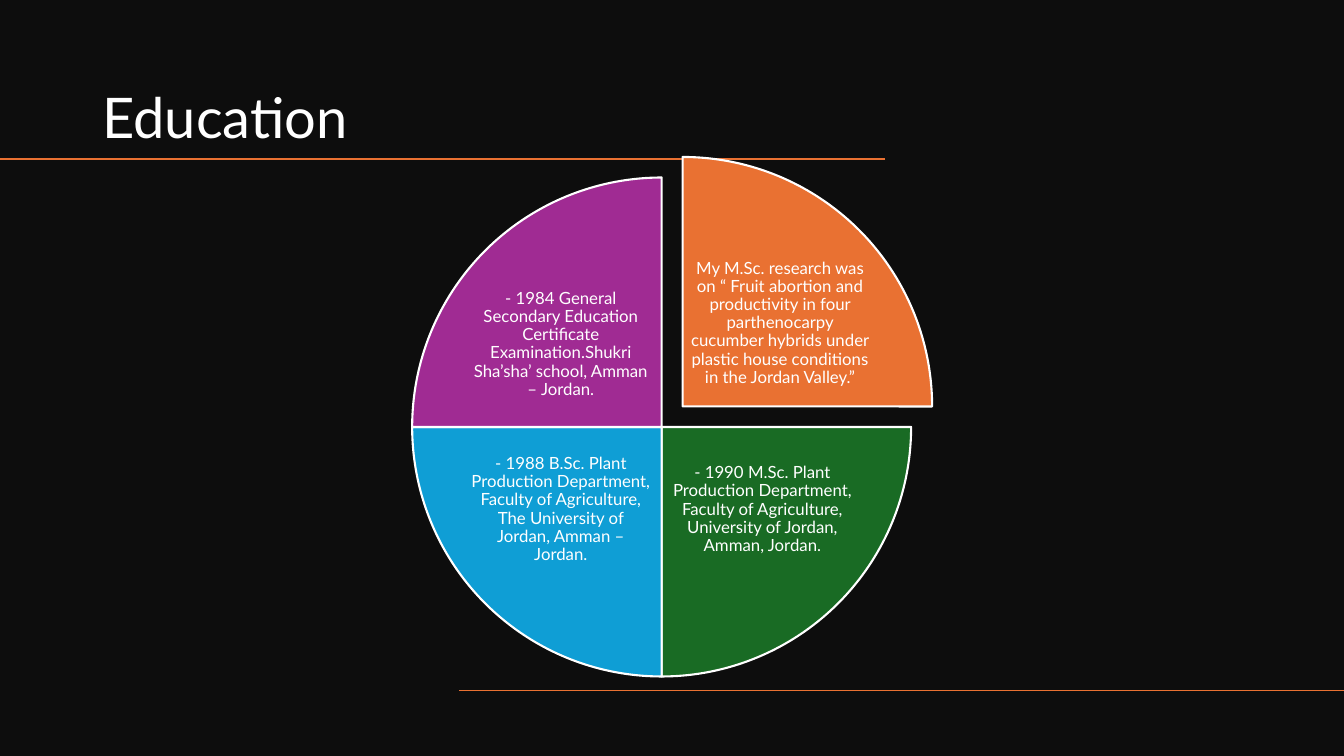
from lxml import etree
from pptx import Presentation
from pptx.dml.color import RGBColor
from pptx.enum import shapes, text
from pptx.oxml.ns import qn
from pptx.util import Pt

COLORS = {
    "background": "0D0D0D",
    "white": "FFFFFF",
    "orange": "E97132",
    "green": "196B24",
    "blue": "0F9ED5",
    "purple": "A02B93",
}
FONT = "Lato"
TITLE = "Education"
RULES = [(632.2, 0, 113.6), (960, 327.8, 493.2)]
QUARTERS = [
    ("orange", 270, (1, -1), (15, -14.7), (12.6, -15),
     "My M.Sc. research was on “ Fruit abortion and productivity in four "
     "parthenocarpy cucumber hybrids under plastic house conditions in the Jordan Valley.”"),
    ("green", 0, (1, 1), (0, 0), (0, 0),
     "- 1990 M.Sc. Plant Production Department, Faculty of Agriculture, "
     "University of Jordan, Amman, Jordan."),
    ("blue", 90, (-1, 1), (0, 0), (0, 0),
     "- 1988 B.Sc. Plant Production Department, Faculty of Agriculture, "
     "The University of Jordan, Amman – Jordan."),
    ("purple", 180, (-1, -1), (0, 0), (0, 0),
     "- 1984 General Secondary Education Certificate Examination.Shukri "
     "Sha’sha’ school, Amman – Jordan."),
]
CENTER_X, CENTER_Y, RADIUS = 472.6, 305, 178.2
LABEL_W, LABEL_H = 131, 106
LABEL_DX, LABEL_DY = 72, 59
ANGLE_UNIT = 0.6


def rgb(name):
    return RGBColor.from_string(COLORS[name])


def place(sp, x, y, w, h):
    sp.left, sp.top, sp.width, sp.height = Pt(x), Pt(y), Pt(w), Pt(h)


def write(tf, content, size, align, anchor):
    tf.word_wrap = True
    tf.auto_size = text.MSO_AUTO_SIZE.NONE
    tf.vertical_anchor = anchor
    p = tf.paragraphs[0]
    p.text = content
    p.alignment = align
    p.line_spacing = 0.9
    p.font.size = Pt(size)
    p.font.name = FONT
    p.font.color.rgb = rgb("white")


def add_rule(s, x1, x2, y):
    line = s.shapes.add_connector(
        shapes.MSO_CONNECTOR.STRAIGHT, Pt(x1), Pt(y), Pt(x2), Pt(y))
    line.line.color.rgb = rgb("orange")
    line.line.width = Pt(1)
    etree.SubElement(line._element.spPr, qn("a:effectLst"))


def add_quarter(s, color, start, side, burst, nudge, content):
    sp = s.shapes.add_shape(
        shapes.MSO_SHAPE.PIE,
        Pt(CENTER_X + burst[0] - RADIUS), Pt(CENTER_Y + burst[1] - RADIUS),
        Pt(2 * RADIUS), Pt(2 * RADIUS))
    sp.adjustments[0] = start * ANGLE_UNIT
    sp.adjustments[1] = (start + 90) % 360 * ANGLE_UNIT
    sp.shadow.inherit = False
    sp.fill.solid()
    sp.fill.fore_color.rgb = rgb(color)
    sp.line.color.rgb = rgb("white")
    sp.line.width = Pt(1.5)

    label = s.shapes.add_textbox(
        Pt(CENTER_X + nudge[0] + side[0] * LABEL_DX - LABEL_W / 2),
        Pt(CENTER_Y + nudge[1] + side[1] * LABEL_DY - LABEL_H / 2),
        Pt(LABEL_W), Pt(LABEL_H))
    tf = label.text_frame
    tf.margin_left = tf.margin_right = tf.margin_top = tf.margin_bottom = Pt(1.2)
    write(tf, content, 12, text.PP_ALIGN.CENTER, text.MSO_ANCHOR.MIDDLE)


def main():
    prs = Presentation()
    prs.slide_width, prs.slide_height = Pt(960), Pt(540)
    s = prs.slides.add_slide(prs.slide_layouts.get_by_name("Title Only"))
    s.background.fill.solid()
    s.background.fill.fore_color.rgb = rgb("background")

    title = s.shapes.title
    place(title, 66, 30, 566, 81)
    write(title.text_frame, TITLE, 40, text.PP_ALIGN.LEFT, text.MSO_ANCHOR.BOTTOM)

    for rule in RULES:
        add_rule(s, *rule)
    for quarter in QUARTERS:
        add_quarter(s, *quarter)
    prs.save("out.pptx")


if __name__ == "__main__":
    main()
